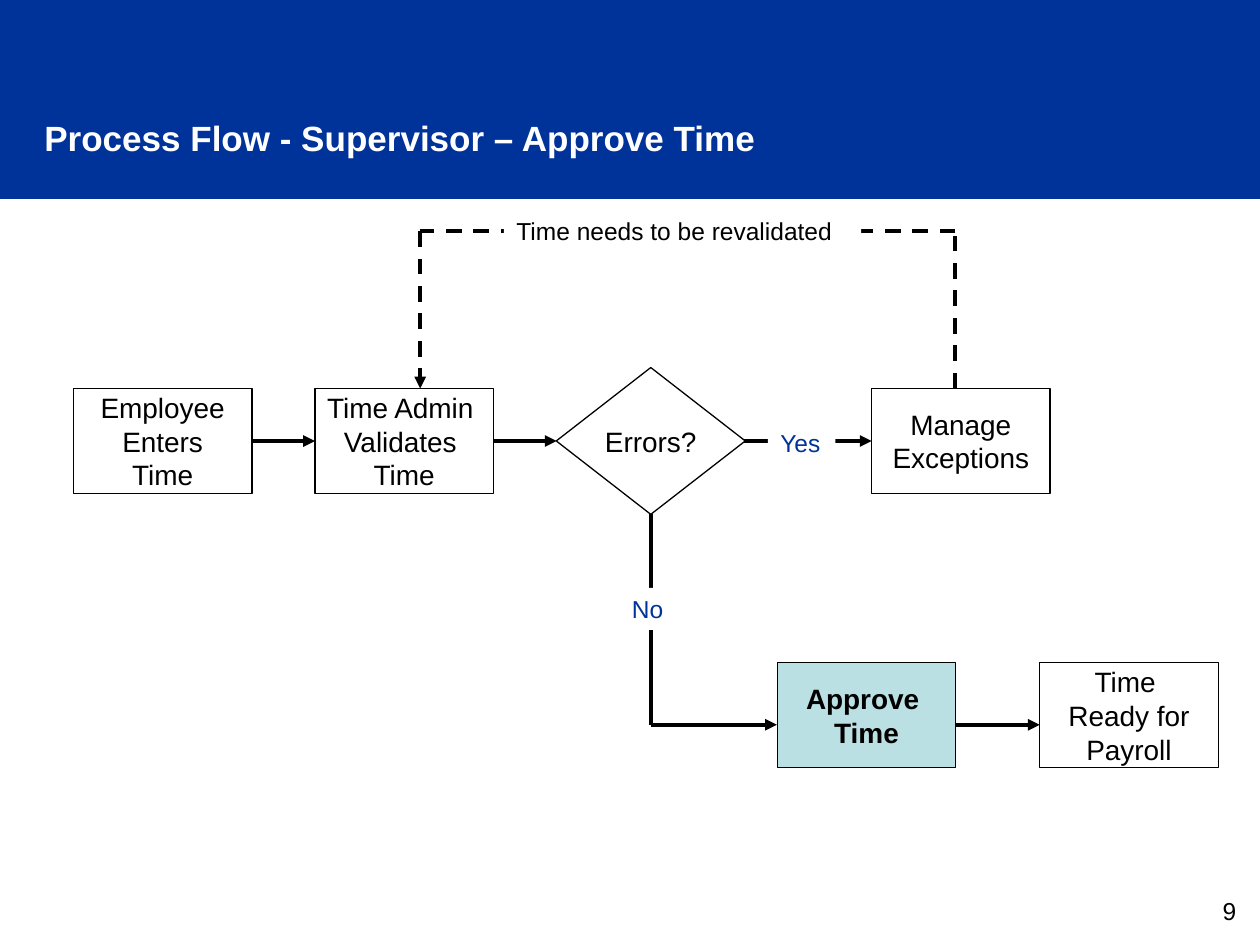
from lxml.etree import SubElement
from pptx import Presentation
from pptx.dml.color import RGBColor
from pptx.enum.dml import MSO_LINE as Dash
from pptx.enum.shapes import MSO_CONNECTOR as Connector, MSO_SHAPE as Shape
from pptx.enum.text import MSO_ANCHOR as Anchor, PP_ALIGN as Align
from pptx.oxml.ns import qn
from pptx.util import Cm, Pt

BLUE, TEAL, WHITE, BLACK = "003399", "BBE0E3", "FFFFFF", "000000"


def color(value):
    return RGBColor.from_string(value)


class FlowPage:
    """Holds the style and the current slide."""

    font = "Arial"
    node_size = (3.6, 2.12)

    def __init__(self, deck):
        self.page = deck.slides.add_slide(deck.slide_layouts[5])
        self.shapes = self.page.shapes

    def set_text(self, box, lines, size, ink=BLACK, bold=False, align=Align.LEFT):
        frame = box.text_frame
        frame.text = "\n".join(lines)
        for para in frame.paragraphs:
            para.alignment = align
            para.font.name = self.font
            para.font.size = Pt(size)
            para.font.bold = bold
            para.font.color.rgb = color(ink)
        return frame

    def block(self, kind, left, top, width, height, fill=None, outline=None):
        box = self.shapes.add_shape(kind, Cm(left), Cm(top), Cm(width), Cm(height))
        box.shadow.inherit = False
        if fill:
            box.fill.solid()
            box.fill.fore_color.rgb = color(fill)
        else:
            box.fill.background()
        if outline:
            box.line.color.rgb = color(outline)
            box.line.width = Pt(0.75)
        else:
            box.line.fill.background()
        return box

    def header(self, text, height):
        title = self.shapes.title
        title.left, title.top = Cm(0.64), Cm(2.34)
        title.width, title.height = Cm(22.86), Cm(1.6)
        frame = self.set_text(title, [text], 20, WHITE, bold=True)
        frame.vertical_anchor = Anchor.TOP
        frame.margin_top = 0
        band = self.block(Shape.RECTANGLE, 0, 0, 25.4, height, BLUE)
        title._element.addprevious(band._element)

    def node(self, lines, x, y, kind=Shape.RECTANGLE, size=node_size, fill=None, bold=False):
        """Draws a flow step centred on x, y."""
        width, height = size
        box = self.block(kind, x - width / 2, y - height / 2, width, height, fill, BLACK)
        frame = self.set_text(box, lines, 16, bold=bold, align=Align.CENTER)
        frame.word_wrap = False
        frame.vertical_anchor = Anchor.MIDDLE

    def label(self, text, left, top, width, ink=BLACK):
        box = self.block(Shape.RECTANGLE, left, top, width, 0.85, WHITE)
        frame = self.set_text(box, [text], 14, ink)
        frame.word_wrap = True
        frame.vertical_anchor = Anchor.TOP

    def route(self, *points, dashed=False):
        """Joins the points with straight lines, the last one with an arrowhead."""
        for start, end in zip(points, points[1:]):
            line = self.shapes.add_connector(
                Connector.STRAIGHT, *(Cm(value) for value in start + end))
            line.line.color.rgb = color(BLACK)
            line.line.width = Pt(2.25)
            if dashed:
                line.line.dash_style = Dash.DASH
            if end == points[-1]:
                SubElement(line.line._get_or_add_ln(), qn("a:tailEnd"), type="triangle")
            SubElement(line._element.spPr, qn("a:effectLst"))

    def number(self, text):
        box = self.shapes.add_textbox(Cm(19.25), Cm(17.93), Cm(5.92), Cm(1.32))
        self.set_text(box, [text], 14, align=Align.RIGHT).word_wrap = True


def main():
    deck = Presentation()
    deck.slide_width, deck.slide_height = Cm(25.4), Cm(19.05)
    flow = FlowPage(deck)
    flow.header("Process Flow - Supervisor – Approve Time", 4.01)
    flow.number("9")

    check_y, approve_y = 8.89, 14.42
    flow.node(["Time Admin ", "Validates ", "Time"], 8.15, check_y)
    flow.node(["Employee", "Enters", "Time"], 3.28, check_y)
    flow.node(["Manage", "Exceptions"], 19.37, check_y)
    flow.node(["Errors?"], 13.12, check_y, Shape.DIAMOND, (3.81, 2.96))
    flow.node(["Approve ", "Time"], 17.47, approve_y, fill=TEAL, bold=True)
    flow.node(["Time ", "Ready for", "Payroll"], 22.76, approve_y)

    for start, end in ((5.08, 6.35), (9.95, 11.22), (14.99, 17.57)):
        flow.route((start, check_y), (end, check_y))
    exit_y = 14.61
    flow.route((13.12, 10.37), (13.12, exit_y), (15.66, exit_y))
    flow.route((19.27, exit_y), (20.96, exit_y))
    flow.route((19.26, 7.83), (19.26, 4.66), (8.47, 4.66), (8.47, 7.83), dashed=True)

    flow.label("Yes", 15.48, 8.51, 1.36, BLUE)
    flow.label("Time needs to be revalidated", 10.16, 4.23, 7.2)
    flow.label("No", 12.49, 11.85, 1.27, BLUE)

    deck.save("out.pptx")


if __name__ == "__main__":
    main()
